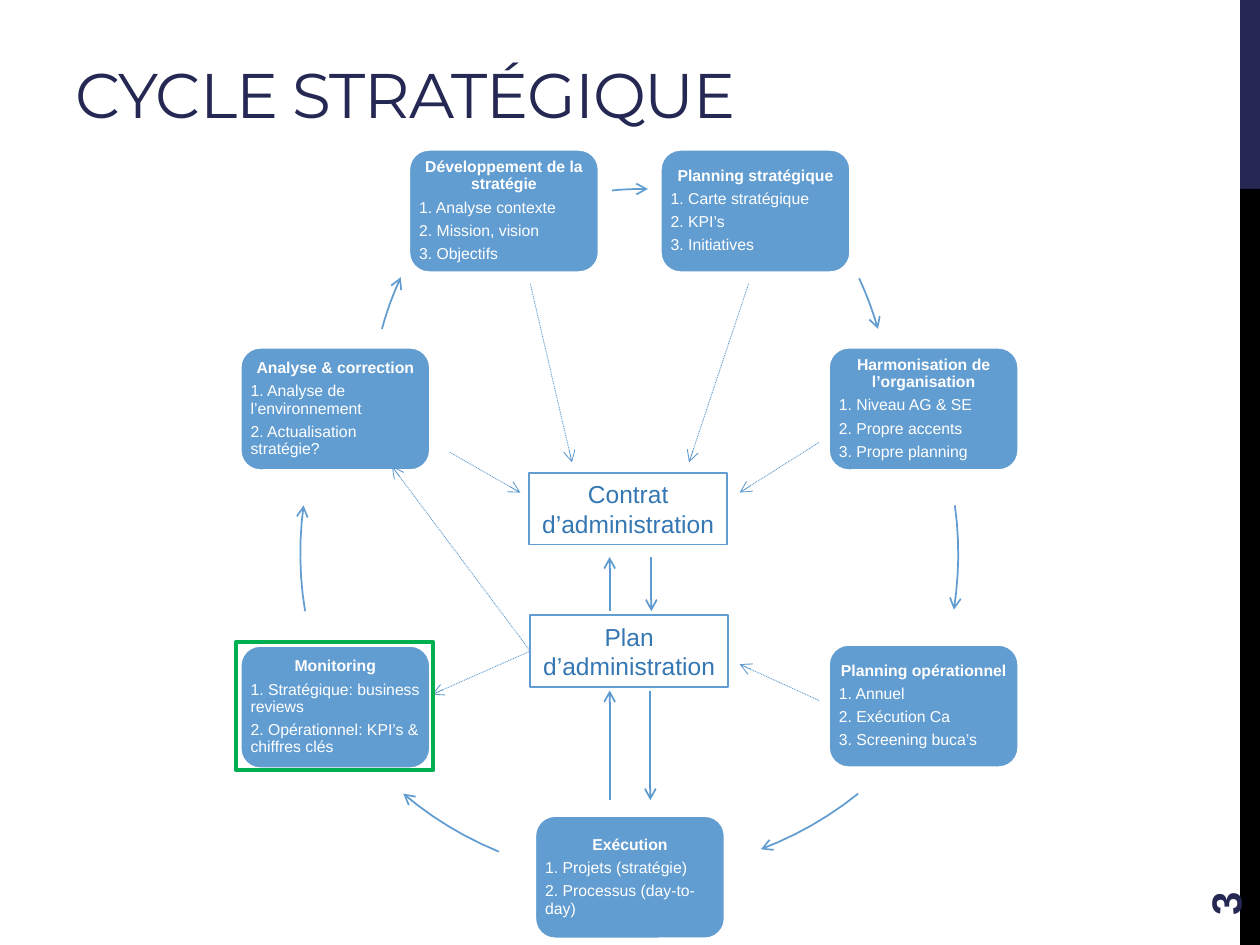
from math import atan2, cos, hypot, sin, sqrt, tau

from lxml.etree import SubElement
from pptx import Presentation
from pptx.dml.color import RGBColor
from pptx.enum.dml import MSO_LINE_DASH_STYLE as Dash
from pptx.enum.shapes import MSO_CONNECTOR as Connector, MSO_SHAPE as Shape
from pptx.enum.text import MSO_ANCHOR as Anchor, PP_ALIGN as Align
from pptx.oxml.ns import qn
from pptx.util import Cm, Pt

NAVY = RGBColor(0x24, 0x28, 0x52)
BLACK = RGBColor(0, 0, 0)
WHITE = RGBColor(0xFF, 0xFF, 0xFF)
BLUE = RGBColor(0x62, 0x9D, 0xD1)
ARROW_BLUE = RGBColor(0x5D, 0x9A, 0xCF)
TEXT_BLUE = RGBColor(0x34, 0x77, 0xB2)
GREEN = RGBColor(0x00, 0xB0, 0x50)

STEP_SIZE = (3.86, 2.51)
CENTRE_SIZE = (3.99, 1.45)
CYCLE_RADIUS = 7.15
ARC_SEGMENTS = 6
LEFT_SIDE = 1

STEPS = [
    (8.23, 3, "Développement de la stratégie",
     ["Analyse contexte", "Mission, vision", "Objectifs"]),
    (13.3, 3, "Planning stratégique",
     ["Carte stratégique", "KPI’s", "Initiatives"]),
    (16.69, 6.99, "Harmonisation de l’organisation",
     ["Niveau AG & SE", "Propre accents", "Propre planning"]),
    (16.69, 12.98, "Planning opérationnel",
     ["Annuel", "Exécution Ca", "Screening buca’s"]),
    (10.77, 16.43, "Exécution",
     ["Projets (stratégie)", "Processus (day-to-day)"]),
    (4.83, 13, "Monitoring",
     ["Stratégique: business reviews", "Opérationnel: KPI’s & chiffres clés"]),
    (4.83, 6.99, "Analyse & correction",
     ["Analyse de l’environnement", "Actualisation stratégie?"]),
]
CYCLE_ARCS = [
    ((12.34, 3.84), (13.06, 3.81)),
    ((17.32, 5.61), (17.7, 6.63)),
    ((19.25, 10.19), (19.23, 12.29)),
    ((17.3, 16), (15.34, 17.12)),
    ((10.06, 17.17), (8.13, 16)),
    ((6.15, 12.32), (6.12, 10.19)),
    ((7.7, 6.63), (8.08, 5.59)),
]
EXCHANGE_ARROWS = [
    ((12.29, 16.13), (12.29, 13.92)),
    ((12.29, 12.32), (12.29, 11.23)),
    ((13.11, 13.92), (13.11, 16.13)),
    ((13.13, 11.23), (13.13, 12.32)),
]
INPUT_ARROWS = [
    ((15.09, 5.72), (13.89, 9.32)),
    ((16.51, 8.92), (14.91, 9.93)),
    ((10.69, 5.72), (11.53, 9.32)),
    ((9.07, 9.12), (10.49, 9.93)),
    ((16.51, 14.12), (14.91, 13.39)),
]
PLAN_LEFT = (10.69, 13.13)
PLAN_TARGETS = [(8.71, 14), (7.9, 9.4)]


def apply_format(target, values):
    for name, value in values.items():
        setattr(target, name, value)


def set_margins(frame, horizontal, vertical):
    apply_format(frame, {
        "word_wrap": True,
        "margin_left": Cm(horizontal), "margin_right": Cm(horizontal),
        "margin_top": Cm(vertical), "margin_bottom": Cm(vertical),
    })


def write_paragraph(paragraph, text, colour, font, layout):
    run = paragraph.add_run()
    run.text = text
    apply_format(run.font, {"name": "Arial", **font})
    run.font.color.rgb = colour
    apply_format(paragraph, layout)
    return run


def style_line(shape, colour, width):
    shape.line.color.rgb = colour
    shape.line.width = Pt(width)


def add_box(slide, kind, position, size, fill=None, line=None, width=1):
    shape = slide.shapes.add_shape(kind, *map(Cm, position + size))
    shape.shadow.inherit = False
    if fill is None:
        shape.fill.background()
    else:
        shape.fill.solid()
        shape.fill.fore_color.rgb = fill
    if line is None:
        shape.line.fill.background()
    else:
        style_line(shape, line, width)
    return shape


def add_step(slide, left, top, heading, items):
    shape = add_box(slide, Shape.ROUNDED_RECTANGLE, (left, top), STEP_SIZE, BLUE, WHITE, 2.25)
    frame = shape.text_frame
    set_margins(frame, 0.1, 0.1)
    frame.vertical_anchor = Anchor.MIDDLE
    spacing = {"line_spacing": 0.9, "space_after": Pt(3.5)}
    write_paragraph(frame.paragraphs[0], heading, WHITE, {"size": Pt(9), "bold": True},
                    {"alignment": Align.CENTER, **spacing})
    for number, item in enumerate(items, 1):
        write_paragraph(frame.add_paragraph(), f"{number}. {item}", WHITE, {"size": Pt(9)},
                        {"alignment": Align.LEFT, **spacing})


def add_centre_box(slide, position, text):
    shape = add_box(slide, Shape.RECTANGLE, position, CENTRE_SIZE, line=BLUE)
    set_margins(shape.text_frame, 0.1, 0.13)
    write_paragraph(shape.text_frame.paragraphs[0], text, TEXT_BLUE, {"size": Pt(14)},
                    {"alignment": Align.CENTER})
    return shape


def add_arrowhead(shape):
    line = shape.element.spPr.find(qn("a:ln"))
    SubElement(line, qn("a:tailEnd"), type="arrow")


def clockwise_points(start, end):
    dx, dy = end[0] - start[0], end[1] - start[1]
    chord = hypot(dx, dy)
    reach = sqrt(CYCLE_RADIUS ** 2 - chord ** 2 / 4) / chord
    x = (start[0] + end[0]) / 2 - dy * reach
    y = (start[1] + end[1]) / 2 + dx * reach
    first = atan2(start[1] - y, start[0] - x)
    sweep = (atan2(end[1] - y, end[0] - x) - first) % tau
    angles = [first + sweep * step / ARC_SEGMENTS for step in range(ARC_SEGMENTS + 1)]
    return [(Cm(x + CYCLE_RADIUS * cos(angle)), Cm(y + CYCLE_RADIUS * sin(angle)))
            for angle in angles]


def add_cycle_arc(slide, start, end):
    first, *others = clockwise_points(start, end)
    builder = slide.shapes.build_freeform(*first)
    builder.add_line_segments(others, close=False)
    shape = builder.convert_to_shape()
    shape.shadow.inherit = False
    shape.fill.background()
    style_line(shape, BLUE, 1)
    add_arrowhead(shape)


def add_arrow(slide, start, end, width=1, dash=None):
    connector = slide.shapes.add_connector(Connector.STRAIGHT, *map(Cm, start + end))
    style_line(connector, ARROW_BLUE, width)
    if dash is not None:
        connector.line.dash_style = dash
    add_arrowhead(connector)
    SubElement(connector.element.spPr, qn("a:effectLst"))
    return connector


def add_title(slide, text):
    title = slide.shapes.title
    apply_format(title, {"left": Cm(1.27), "top": Cm(0.43),
                         "width": Cm(17.83), "height": Cm(3.81)})
    apply_format(title.text_frame, {"vertical_anchor": Anchor.BOTTOM, "margin_bottom": Cm(1.6)})
    run = write_paragraph(title.text_frame.paragraphs[0], text, NAVY,
                          {"name": "Montserrat", "size": Pt(36)}, {"alignment": Align.LEFT})
    run.font.element.set("spc", "-60") if hasattr(run.font, "element") else \
        run._r.get_or_add_rPr().set("spc", "-60")


def add_page_number(slide, text):
    shape = slide.shapes.add_textbox(Cm(22.86), Cm(16.36), Cm(3.66), Cm(1.02))
    shape.rotation = 270
    apply_format(shape.text_frame, {"word_wrap": True, "vertical_anchor": Anchor.MIDDLE})
    write_paragraph(shape.text_frame.paragraphs[0], text, NAVY,
                    {"size": Pt(24), "bold": True}, {"alignment": Align.LEFT})


def main():
    presentation = Presentation()
    apply_format(presentation, {"slide_width": Cm(25.4), "slide_height": Cm(19.05)})
    slide = presentation.slides.add_slide(presentation.slide_layouts[5])
    add_box(slide, Shape.RECTANGLE, (25, 0), (0.4, 3.81), NAVY)
    add_box(slide, Shape.RECTANGLE, (25, 3.81), (0.4, 15.24), BLACK)
    add_title(slide, "CYCLE STRATÉGIQUE")
    for step in STEPS:
        add_step(slide, *step)
    for start, end in CYCLE_ARCS:
        add_cycle_arc(slide, start, end)
    add_page_number(slide, "3")
    plan = add_centre_box(slide, (10.69, 12.4), "Plan d’administration")
    add_centre_box(slide, (10.67, 9.53), "Contrat d’administration")
    for start, end in EXCHANGE_ARROWS:
        add_arrow(slide, start, end)
    for start, end in INPUT_ARROWS:
        add_arrow(slide, start, end, 0.5, Dash.ROUND_DOT)
    for target in PLAN_TARGETS:
        add_arrow(slide, PLAN_LEFT, target, 0.5, Dash.ROUND_DOT).begin_connect(plan, LEFT_SIDE)
    add_box(slide, Shape.RECTANGLE, (4.75, 12.95), (3.99, 2.57), line=GREEN, width=2.25)
    presentation.save("out.pptx")


if __name__ == "__main__":
    main()
